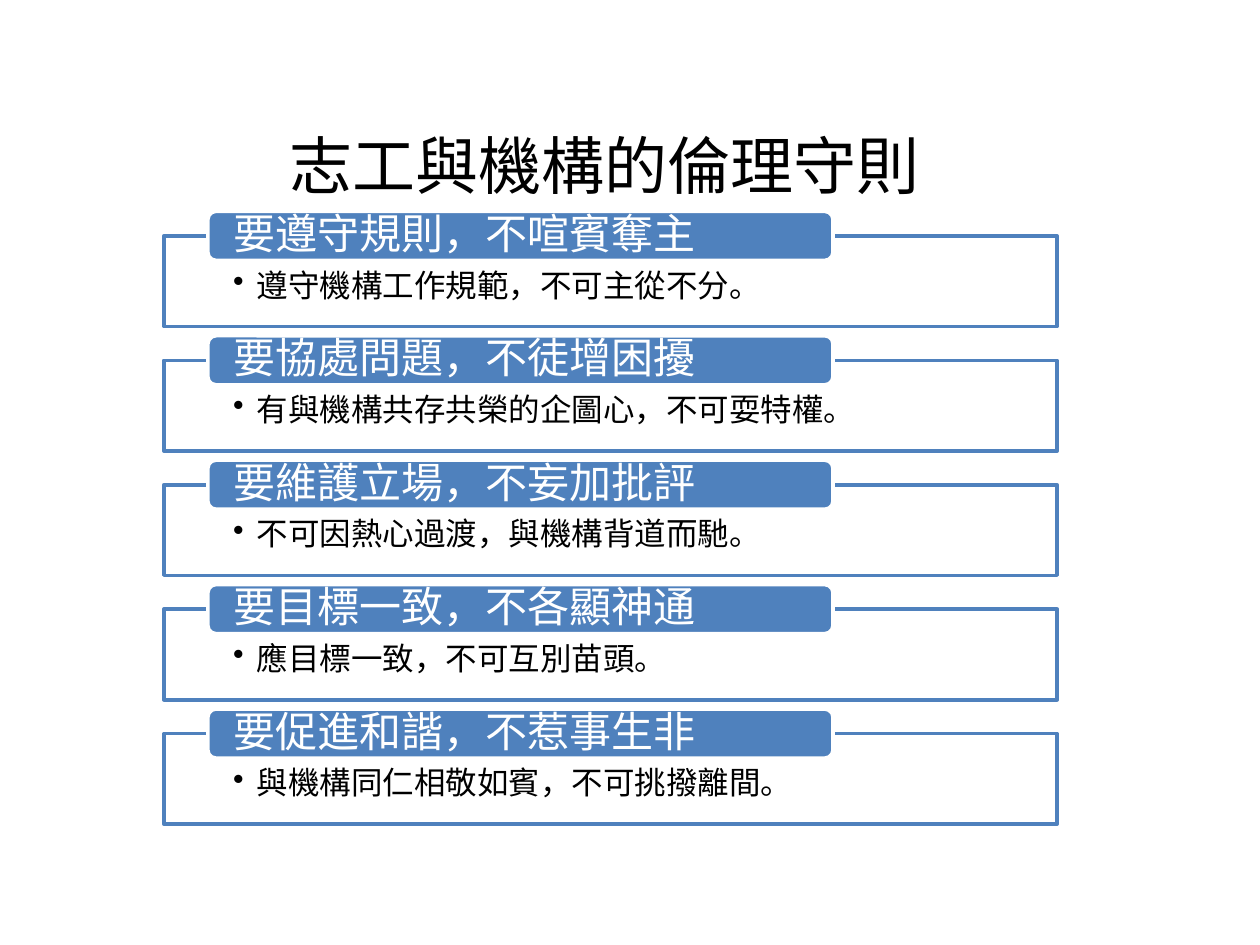
"""Build the slide on ethical rules between volunteers and institutions."""
from dataclasses import dataclass

from lxml.etree import SubElement
from pptx import Presentation
from pptx.dml.color import RGBColor
from pptx.enum.shapes import MSO_SHAPE
from pptx.enum.text import MSO_ANCHOR, PP_ALIGN
from pptx.oxml.ns import qn
from pptx.shapes.autoshape import Shape
from pptx.slide import Slide
from pptx.text.text import _Paragraph as Paragraph
from pptx.util import Pt

COLORS = {"accent": "4F81BD", "white": "FFFFFF", "black": "000000"}
BODY_FONT = "Noto Sans CJK SC"
FIRST_TOP = 120.8
PITCH = 71.1
RULE_DROP = 14


@dataclass
class Rule:
    """A heading and the detail beneath it."""

    heading: str
    detail: str


RULES = [
    Rule("要遵守規則，不喧賓奪主", "遵守機構工作規範，不可主從不分。"),
    Rule("要協處問題，不徒增困擾", "有與機構共存共榮的企圖心，不可耍特權。"),
    Rule("要維護立場，不妄加批評", "不可因熱心過渡，與機構背道而馳。"),
    Rule("要目標一致，不各顯神通", "應目標一致，不可互別苗頭。"),
    Rule("要促進和諧，不惹事生非", "與機構同仁相敬如賓，不可挑撥離間。"),
]


def color(name: str) -> RGBColor:
    """Return a named colour."""
    return RGBColor.from_string(COLORS[name])


def set_font(paragraph: Paragraph, name: str, size: float, color_name: str) -> None:
    """Set the Latin and East Asian font of a paragraph."""
    font = paragraph.font
    font.name = name
    font.size = Pt(size)
    font.color.rgb = color(color_name)
    SubElement(font._element, qn("a:ea"), typeface=BODY_FONT)


def add_bullet(paragraph: Paragraph) -> None:
    """Give a paragraph a hanging round bullet."""
    properties = paragraph._p.get_or_add_pPr()
    properties.set("marL", str(Pt(13.5)))
    properties.set("indent", str(Pt(-13.5)))
    SubElement(properties, qn("a:buChar"), char="•")


def set_insets(shape: Shape, side: float, top: float, bottom: float) -> None:
    """Set the text margins of a shape."""
    frame = shape.text_frame
    frame.word_wrap = True
    frame.margin_left = frame.margin_right = Pt(side)
    frame.margin_top = Pt(top)
    frame.margin_bottom = Pt(bottom)


def add_panel(slide: Slide, kind: MSO_SHAPE, left: float, top: float, width: float,
              height: float, fill: str, line: str, text: str) -> Shape:
    """Add a filled and outlined shape with left-aligned text."""
    shape = slide.shapes.add_shape(kind, Pt(left), Pt(top), Pt(width), Pt(height))
    shape.shadow.inherit = False
    shape.fill.solid()
    shape.fill.fore_color.rgb = color(fill)
    shape.line.color.rgb = color(line)
    shape.line.width = Pt(2)
    paragraph = shape.text_frame.paragraphs[0]
    paragraph.text = text
    paragraph.alignment = PP_ALIGN.LEFT
    paragraph.line_spacing = 0.9
    return shape


def add_rule(slide: Slide, rule: Rule, top: float) -> None:
    """Add the detail panel and its overlapping heading tab."""
    panel = add_panel(slide, MSO_SHAPE.RECTANGLE, 93.6, top + RULE_DROP, 510.5, 51.8,
                      "white", "accent", rule.detail)
    fill_color = panel.fill._xPr.find(qn("a:solidFill"))[0]
    SubElement(fill_color, qn("a:alpha"), val="90000")
    set_insets(panel, 39.6, 19.4, 10)
    panel.text_frame.vertical_anchor = MSO_ANCHOR.TOP
    detail = panel.text_frame.paragraphs[0]
    add_bullet(detail)
    set_font(detail, BODY_FONT, 18, "black")

    tab = add_panel(slide, MSO_SHAPE.ROUNDED_RECTANGLE, 118.8, top, 357.2, 28,
                    "accent", "white", rule.heading)
    set_insets(tab, 13.5, 0, 0)
    tab.text_frame.vertical_anchor = MSO_ANCHOR.MIDDLE
    set_font(tab.text_frame.paragraphs[0], BODY_FONT, 24, "white")


def add_title(slide: Slide, text: str) -> None:
    """Add the centred slide title."""
    title = slide.shapes.add_textbox(Pt(31), Pt(49), Pt(629.3), Pt(90))
    title.text_frame.word_wrap = True
    title.text_frame.vertical_anchor = MSO_ANCHOR.MIDDLE
    paragraph = title.text_frame.paragraphs[0]
    paragraph.text = text
    paragraph.alignment = PP_ALIGN.CENTER
    set_font(paragraph, "Calibri", 36, "black")


def main() -> None:
    """Build and save the presentation."""
    presentation = Presentation()
    presentation.slide_width = Pt(720)
    presentation.slide_height = Pt(540)
    slide = presentation.slides.add_slide(presentation.slide_layouts[6])
    add_title(slide, "志工與機構的倫理守則")
    for index, rule in enumerate(RULES):
        add_rule(slide, rule, FIRST_TOP + index * PITCH)
    presentation.save("out.pptx")


if __name__ == "__main__":
    main()
